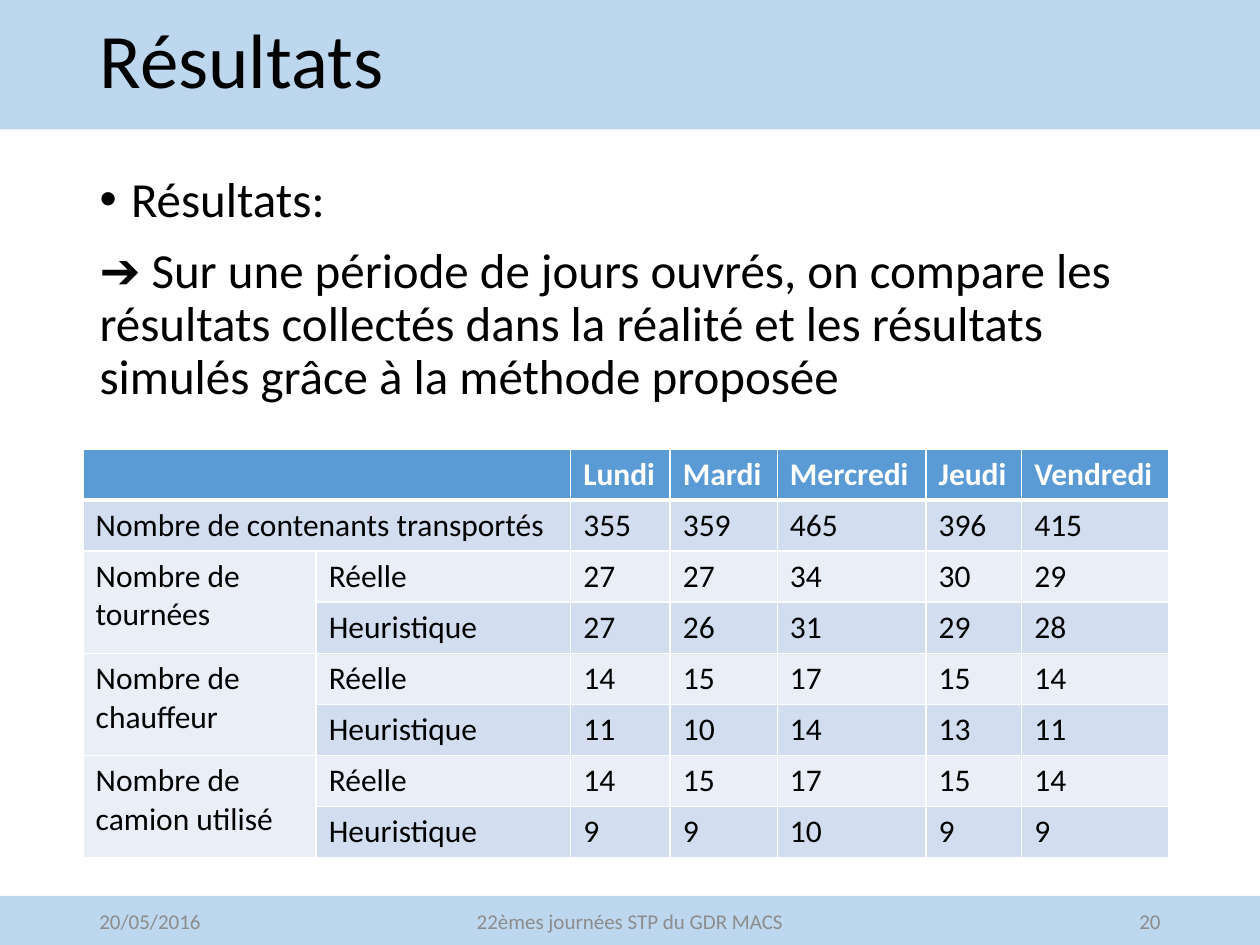
from lxml.etree import SubElement
from pptx import Presentation
from pptx.dml.color import RGBColor
from pptx.enum.shapes import MSO_SHAPE
from pptx.enum.text import MSO_ANCHOR, MSO_AUTO_SIZE, PP_ALIGN
from pptx.oxml.ns import qn
from pptx.util import Inches, Pt

WIDTH, HEIGHT = Inches(10), Inches(7.5)
FONT = "Calibri"
BLACK = RGBColor(0x00, 0x00, 0x00)
WHITE = RGBColor(0xFF, 0xFF, 0xFF)
GREY = RGBColor(0x8C, 0x8C, 0x8C)
BAND = RGBColor(0xBD, 0xD7, 0xEE)
HEADER = RGBColor(0x5B, 0x9B, 0xD5)
DARK_ROW = RGBColor(0xD2, 0xDE, 0xEF)
LIGHT_ROW = RGBColor(0xEA, 0xEF, 0xF7)

COLUMN_SHARES = [1.85, 2.02, 0.79, 0.85, 1.18, 0.76, 1.17]
ROWS = [
    ["", "", "Lundi", "Mardi", "Mercredi", "Jeudi", "Vendredi"],
    ["Nombre de contenants transportés", "", "355", "359", "465", "396", "415"],
    ["Nombre de tournées", "Réelle", "27", "27", "34", "30", "29"],
    ["", "Heuristique", "27", "26", "31", "29", "28"],
    ["Nombre de chauffeur", "Réelle", "14", "15", "17", "15", "14"],
    ["", "Heuristique", "11", "10", "14", "13", "11"],
    ["Nombre de camion utilisé", "Réelle", "14", "15", "17", "15", "14"],
    ["", "Heuristique", "9", "9", "10", "9", "9"],
]
MERGES = [((0, 0), (0, 1)), ((1, 0), (1, 1))] + [
    ((row, 0), (row + 1, 0)) for row in (2, 4, 6)
]


def share(left, top, width, height):
    """Turn percentages of the slide into a box of lengths."""
    return (int(WIDTH * left / 100), int(HEIGHT * top / 100),
            int(WIDTH * width / 100), int(HEIGHT * height / 100))


def add_run(p, text, size, color, bold=False):
    """Add one formatted run to a paragraph."""
    r = p.add_run()
    r.text = text
    r.font.name, r.font.size, r.font.bold = FONT, Pt(size), bold
    r.font.color.rgb = color


def place(sp, box):
    """Place a text shape in a box and return its prepared text frame."""
    sp.left, sp.top, sp.width, sp.height = box
    tf = sp.text_frame
    tf.word_wrap = True
    tf.auto_size = MSO_AUTO_SIZE.NONE
    tf.vertical_anchor = MSO_ANCHOR.MIDDLE
    return tf


def add_band(s, box):
    """Add a coloured band behind everything else."""
    sp = s.shapes.add_shape(MSO_SHAPE.RECTANGLE, *box)
    sp.shadow.inherit = False
    sp.fill.solid()
    sp.fill.fore_color.rgb = BAND
    sp.line.fill.background()
    s.shapes.element.insert(2, sp.element)


def add_title(s, box):
    """Fill the title placeholder."""
    p = place(s.shapes.title, box).paragraphs[0]
    p.alignment = PP_ALIGN.LEFT
    p.line_spacing = 0.9
    add_run(p, "Résultats", 44, BLACK)


def set_bullet(p, char=None):
    """Give a paragraph a hanging bullet, or none."""
    pPr = p._p.get_or_add_pPr()
    indent = Inches(0.25) if char else 0
    pPr.set("marL", str(indent))
    pPr.set("indent", str(-indent))
    if char:
        SubElement(pPr, qn("a:buFont"), typeface="Arial")
        SubElement(pPr, qn("a:buChar"), char=char)
    else:
        SubElement(pPr, qn("a:buNone"))


def add_body(s, box):
    """Fill the body placeholder with the bullet and its comment."""
    tf = place(s.placeholders[1], box)
    lines = [
        ("Résultats:", "•"),
        ("➔ Sur une période de jours ouvrés, on compare les résultats collectés "
         "dans la réalité et les résultats simulés grâce à la méthode proposée", None),
    ]
    for i, (text, char) in enumerate(lines):
        p = tf.add_paragraph() if i else tf.paragraphs[0]
        p.alignment = PP_ALIGN.LEFT
        p.line_spacing = 0.9
        p.space_before = Pt(10)
        set_bullet(p, char)
        add_run(p, text, 28, BLACK)


def set_borders(cell, top, bottom):
    """Draw white borders around a cell, with widths in points."""
    tcPr = cell._tc.get_or_add_tcPr()
    for side, width in (("L", 1), ("R", 1), ("T", top), ("B", bottom)):
        ln = SubElement(tcPr, qn(f"a:ln{side}"), w=str(Pt(width)))
        fill = SubElement(ln, qn("a:solidFill"))
        SubElement(fill, qn("a:srgbClr"), val=str(WHITE))


def row_color(row):
    """Return the fill of a row."""
    if row == 0:
        return HEADER
    return DARK_ROW if row % 2 else LIGHT_ROW


def add_results_table(s, box):
    """Add the table comparing real and heuristic results."""
    table = s.shapes.add_table(len(ROWS), len(COLUMN_SHARES), *box).table
    table.horz_banding = False
    for column, part in zip(table.columns, COLUMN_SHARES):
        column.width = int(box[2] * part / sum(COLUMN_SHARES))
    for i, values in enumerate(ROWS):
        table.rows[i].height = box[3] // len(ROWS)
        for j, text in enumerate(values):
            cell = table.cell(i, j)
            set_borders(cell, 3 if i == 1 else 1, 3 if i == 0 else 1)
            cell.fill.solid()
            cell.fill.fore_color.rgb = row_color(i)
            if text:
                add_run(cell.text_frame.paragraphs[0], text, 18,
                        BLACK if i else WHITE, bold=i == 0)
    for first, last in MERGES:
        table.cell(*first).merge(table.cell(*last))


def add_footer(s, top, height):
    """Add the date, the event and the page number on the bottom band."""
    add_band(s, share(0, top, 100, height))
    parts = [
        ("20/05/2016", 6.9, 22.5, PP_ALIGN.LEFT),
        ("22èmes journées STP du GDR MACS", 33.1, 33.8, PP_ALIGN.CENTER),
        ("20", 70.6, 22.5, PP_ALIGN.RIGHT),
    ]
    for text, left, width, alignment in parts:
        box = share(left, top, width, height)
        p = place(s.shapes.add_textbox(*box), box).paragraphs[0]
        p.alignment = alignment
        add_run(p, text, 12, GREY)


def main():
    """Build the results slide."""
    prs = Presentation()
    prs.slide_width, prs.slide_height = WIDTH, HEIGHT
    s = prs.slides.add_slide(prs.slide_layouts[1])
    add_band(s, share(0, 0, 100, 13.7))
    add_title(s, share(6.9, 1.33, 86.2, 10.8))
    add_results_table(s, share(6.6, 47.5, 86.2, 43.2))
    add_footer(s, 94.8, 5.3)
    add_body(s, share(6.9, 17.5, 86.2, 26.4))
    prs.save("out.pptx")


if __name__ == "__main__":
    main()
